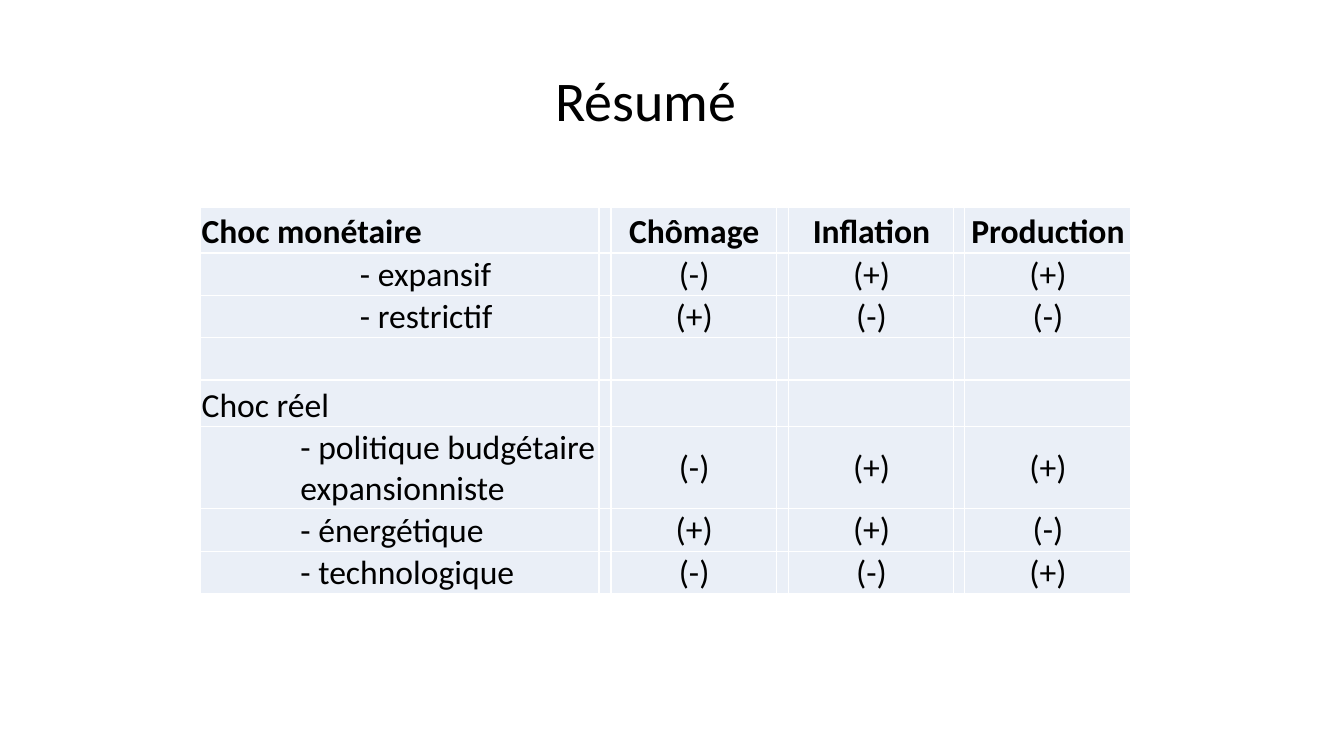
from lxml.etree import SubElement
from pptx import Presentation
from pptx.dml.color import RGBColor
from pptx.enum.text import MSO_ANCHOR as ANCHOR, PP_ALIGN as ALIGN
from pptx.oxml.ns import qn
from pptx.util import Inches, Pt

BLACK = RGBColor(0x00, 0x00, 0x00)
WHITE = RGBColor(0xFF, 0xFF, 0xFF)
PALE_BLUE = RGBColor(0xEA, 0xEF, 0xF7)

COLUMN_WIDTHS = [3.95, 0.12, 1.64, 0.12, 1.64, 0.11, 1.64]
ROW_HEIGHTS = [0.45, 0.42, 0.42, 0.42, 0.46, 0.82, 0.42, 0.42]
MONETARY_INDENT = 1.58
REAL_INDENT = 0.99

# label, indent of the label, effects on the three variables
ROWS = [
    ("Choc monétaire", 0.01, ["Chômage", "Inflation", "Production"]),
    ("- expansif", MONETARY_INDENT, ["(-)", "(+)", "(+)"]),
    ("- restrictif", MONETARY_INDENT, ["(+)", "(-)", "(-)"]),
    ("", 0.01, ["", "", ""]),
    ("Choc réel", 0.01, ["", "", ""]),
    ("- politique budgétaire expansionniste", REAL_INDENT, ["(-)", "(+)", "(+)"]),
    ("- énergétique", REAL_INDENT, ["(+)", "(+)", "(-)"]),
    ("- technologique", REAL_INDENT, ["(-)", "(-)", "(+)"]),
]


class SlideBuilder:
    font = "Calibri"
    title_size = Pt(40)
    table_size = Pt(24)

    def __init__(self, prs):
        self.slide = prs.slides.add_slide(prs.slide_layouts[6])

    def set_text(self, tf, text, size, align, bold=False):
        tf.text = text
        p = tf.paragraphs[0]
        p.alignment = align
        for r in p.runs:
            r.font.name = self.font
            r.font.size = size
            r.font.bold = bold
            r.font.color.rgb = BLACK
        return p

    def title(self, text, left, top, width, height):
        box = self.slide.shapes.add_textbox(
            Inches(left), Inches(top), Inches(width), Inches(height))
        tf = box.text_frame
        tf.word_wrap = True
        tf.vertical_anchor = ANCHOR.BOTTOM
        p = self.set_text(tf, text, self.title_size, ALIGN.CENTER)
        p.line_spacing = 0.9

    def border(self, cell):
        """Draw a thin white line on all four sides of the cell."""
        tc_pr = cell._tc.get_or_add_tcPr()
        for side in ("a:lnL", "a:lnR", "a:lnT", "a:lnB"):
            ln = SubElement(tc_pr, qn(side), w=str(Pt(1)))
            fill = SubElement(ln, qn("a:solidFill"))
            SubElement(fill, qn("a:srgbClr"), val=str(WHITE))

    def cell(self, cell, text, indent, align, anchor, bold):
        self.border(cell)
        cell.fill.solid()
        cell.fill.fore_color.rgb = PALE_BLUE
        cell.margin_left = Inches(indent)
        cell.margin_top = Inches(0.01)
        cell.margin_right = cell.margin_bottom = 0
        cell.vertical_anchor = anchor
        self.set_text(cell.text_frame, text, self.table_size, align, bold)

    def table(self, rows, left, top):
        table = self.slide.shapes.add_table(
            len(rows), len(COLUMN_WIDTHS), Inches(left), Inches(top),
            Inches(sum(COLUMN_WIDTHS)), Inches(sum(ROW_HEIGHTS))).table
        table.first_row = table.horz_banding = False
        for column, width in zip(table.columns, COLUMN_WIDTHS):
            column.width = Inches(width)
        for i, (label, indent, effects) in enumerate(rows):
            table.rows[i].height = Inches(ROW_HEIGHTS[i])
            header = i == 0
            anchor = ANCHOR.BOTTOM if header else ANCHOR.MIDDLE
            self.cell(table.cell(i, 0), label, indent, ALIGN.LEFT,
                      ANCHOR.BOTTOM, header)
            for j, effect in enumerate(effects):
                self.cell(table.cell(i, 2 * j + 1), "", 0.01, ALIGN.CENTER,
                          anchor, header)
                self.cell(table.cell(i, 2 * j + 2), effect, 0.01, ALIGN.CENTER,
                          anchor, header)


def main():
    prs = Presentation()
    prs.slide_width, prs.slide_height = Inches(13.33), Inches(7.5)
    builder = SlideBuilder(prs)
    builder.title("Résumé", 0.47, 0.25, 11.87, 1.13)
    builder.table(ROWS, 1.99, 2.06)
    prs.save("out.pptx")


if __name__ == "__main__":
    main()
